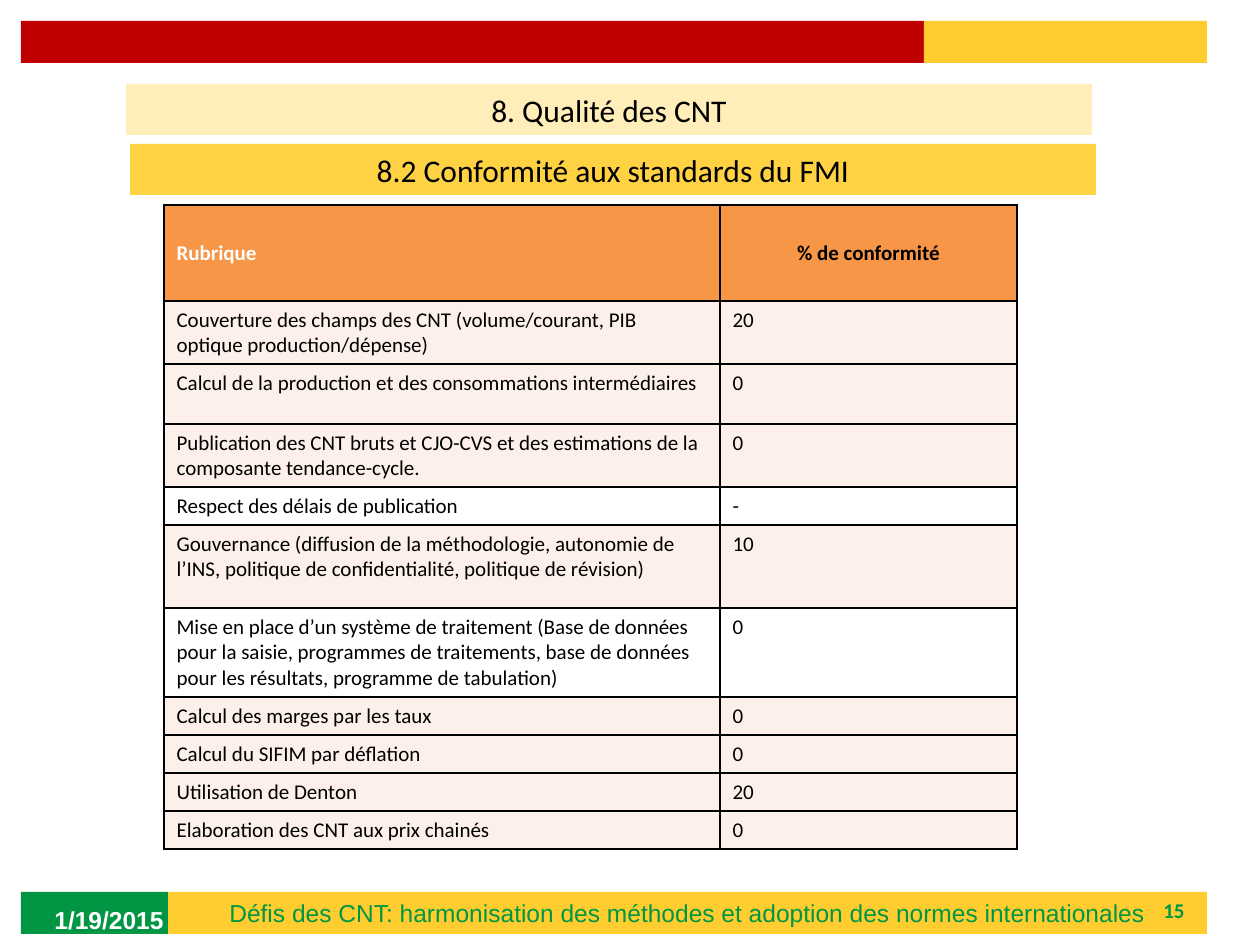
from lxml import etree
from pptx import Presentation
from pptx.dml.color import RGBColor
from pptx.enum.shapes import MSO_SHAPE
from pptx.enum.text import MSO_ANCHOR, PP_ALIGN
from pptx.oxml.ns import qn
from pptx.util import Emu, Pt

PX = 914400 // 126
RECTANGLE = MSO_SHAPE.RECTANGLE
TOP, MIDDLE = MSO_ANCHOR.TOP, MSO_ANCHOR.MIDDLE
LEFT, CENTER, RIGHT = PP_ALIGN.LEFT, PP_ALIGN.CENTER, PP_ALIGN.RIGHT

BLACK = RGBColor(0x00, 0x00, 0x00)
WHITE = RGBColor(0xFF, 0xFF, 0xFF)
GREEN = RGBColor(0x00, 0x96, 0x44)
RED = RGBColor(0xC0, 0x00, 0x00)
YELLOW = RGBColor(0xFF, 0xCD, 0x2F)
CREAM = RGBColor(0xFF, 0xEE, 0xB9)
GOLD = RGBColor(0xFF, 0xD2, 0x43)
ORANGE = RGBColor(0xF7, 0x96, 0x46)
PINK = RGBColor(0xFD, 0xEF, 0xE9)

TITLE = {"name": "Calibri", "size": Pt(18), "color": BLACK}
FOOTER = {"name": "Arial", "size": Pt(14), "color": GREEN}
DATE = {"name": "Arial", "size": Pt(14), "bold": True, "color": WHITE}
NUMBER = {"name": "Calibri", "size": Pt(12), "bold": True, "color": GREEN}
BODY = {"name": "Calibri", "size": Pt(12), "bold": False, "color": BLACK}
HEADER = {**BODY, "bold": True}

COLUMN_WIDTHS = [556, 297]
HEADER_HEIGHT = 96
# Item, conformity, row height, fill
ROWS = [
    ("Couverture des champs des CNT (volume/courant, PIB optique production/dépense)",
     "20", 62, PINK),
    ("Calcul de la production et des consommations intermédiaires", "0", 60, PINK),
    ("Publication des CNT bruts et CJO-CVS et des estimations de la composante "
     "tendance-cycle.", "0", 63, PINK),
    ("Respect des délais de publication", "-", 38, WHITE),
    ("Gouvernance (diffusion de la méthodologie, autonomie de l’INS, politique de "
     "confidentialité, politique de révision)", "10", 83, PINK),
    ("Mise en place d’un système de traitement (Base de données pour la saisie, "
     "programmes de traitements, base de données pour les résultats, programme de "
     "tabulation)", "0", 89, WHITE),
    ("Calcul des marges par les taux", "0", 38, PINK),
    ("Calcul du SIFIM par déflation", "0", 38, PINK),
    ("Utilisation de Denton", "20", 38, PINK),
    ("Elaboration des CNT aux prix chainés", "0", 38, PINK),
]


def px(*lengths):
    return [Emu(length * PX) for length in lengths]


def write(frame, text, style, align=LEFT):
    frame.word_wrap = True
    para = frame.paragraphs[0]
    para.alignment = align
    span = para.add_run()
    span.text = text
    for key, value in style.items():
        if key == "color":
            span.font.color.rgb = value
        else:
            setattr(span.font, key, value)


def add_bar(page, place, color, text=None, style=None):
    bar = page.shapes.add_shape(RECTANGLE, *px(*place))
    bar.shadow.inherit = False
    bar.fill.solid()
    bar.fill.fore_color.rgb = color
    bar.line.fill.background()
    if text:
        bar.text_frame.vertical_anchor = MIDDLE
        write(bar.text_frame, text, style, CENTER)


def add_label(page, place, text, style, align=LEFT):
    box = page.shapes.add_textbox(*px(*place))
    box.text_frame.vertical_anchor = MIDDLE
    write(box.text_frame, text, style, align)


def add_borders(cell):
    properties = cell._tc.get_or_add_tcPr()
    for index, side in enumerate(("lnL", "lnR", "lnT", "lnB")):
        line = etree.Element(qn(f"a:{side}"), w=str(Pt(1)))
        fill = etree.SubElement(line, qn("a:solidFill"))
        etree.SubElement(fill, qn("a:srgbClr"), val=str(BLACK))
        properties.insert(index, line)


def fill_cell(cell, text, color, style, align=LEFT, anchor=TOP):
    cell.fill.solid()
    cell.fill.fore_color.rgb = color
    cell.vertical_anchor = anchor
    write(cell.text_frame, text, style, align)
    add_borders(cell)


def add_conformity_table(page, left, top):
    heights = [HEADER_HEIGHT] + [row[2] for row in ROWS]
    place = px(left, top, sum(COLUMN_WIDTHS), sum(heights))
    table = page.shapes.add_table(len(heights), len(COLUMN_WIDTHS), *place).table
    for column, width in zip(table.columns, px(*COLUMN_WIDTHS)):
        column.width = width
    for row, height in zip(table.rows, px(*heights)):
        row.height = height
    fill_cell(table.cell(0, 0), "Rubrique", ORANGE, {**HEADER, "color": WHITE},
              anchor=MIDDLE)
    fill_cell(table.cell(0, 1), "% de conformité", ORANGE, HEADER, CENTER, MIDDLE)
    for index, (item, conformity, _, color) in enumerate(ROWS, start=1):
        fill_cell(table.cell(index, 0), item, color, BODY)
        fill_cell(table.cell(index, 1), conformity, color, BODY)


def main():
    deck = Presentation()
    deck.slide_width, deck.slide_height = px(1260, 945)
    page = deck.slides.add_slide(deck.slide_layouts[6])

    add_bar(page, (21, 892, 147, 42), GREEN)
    add_bar(page, (168, 892, 1039, 42), YELLOW,
            "Défis des CNT: harmonisation des méthodes et adoption des normes "
            "internationales", FOOTER)
    add_label(page, (903, 893, 294, 34), "15", NUMBER, RIGHT)
    add_bar(page, (21, 21, 903, 42), RED)
    add_bar(page, (924, 21, 283, 42), YELLOW)
    add_label(page, (42, 895, 294, 50), "1/19/2015", DATE)

    add_bar(page, (126, 84, 966, 51), CREAM, "8. Qualité des CNT", TITLE)
    add_conformity_table(page, 164, 205)
    add_bar(page, (130, 144, 966, 51), GOLD, "8.2 Conformité aux standards du FMI",
            TITLE)
    deck.save("out.pptx")


if __name__ == "__main__":
    main()
